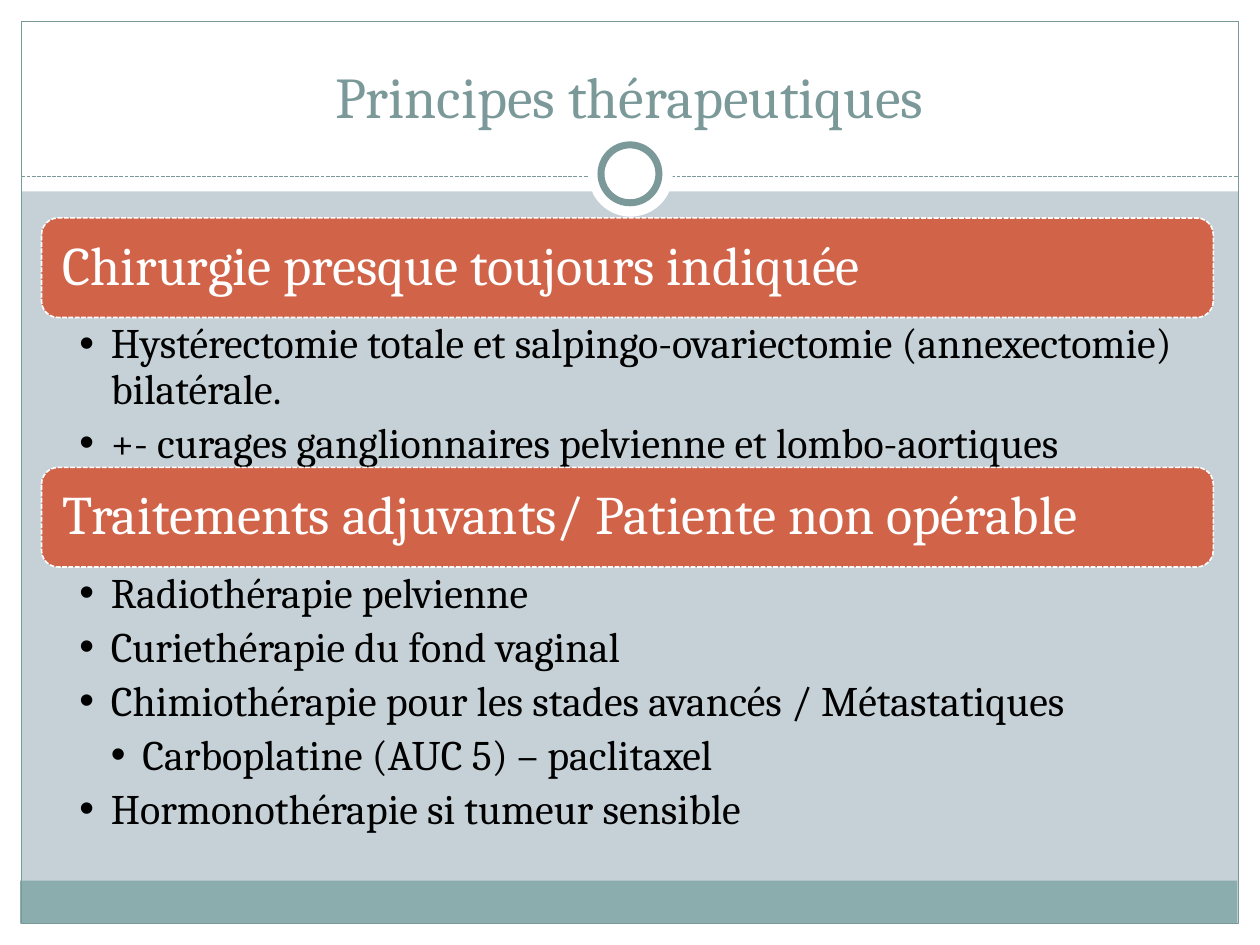
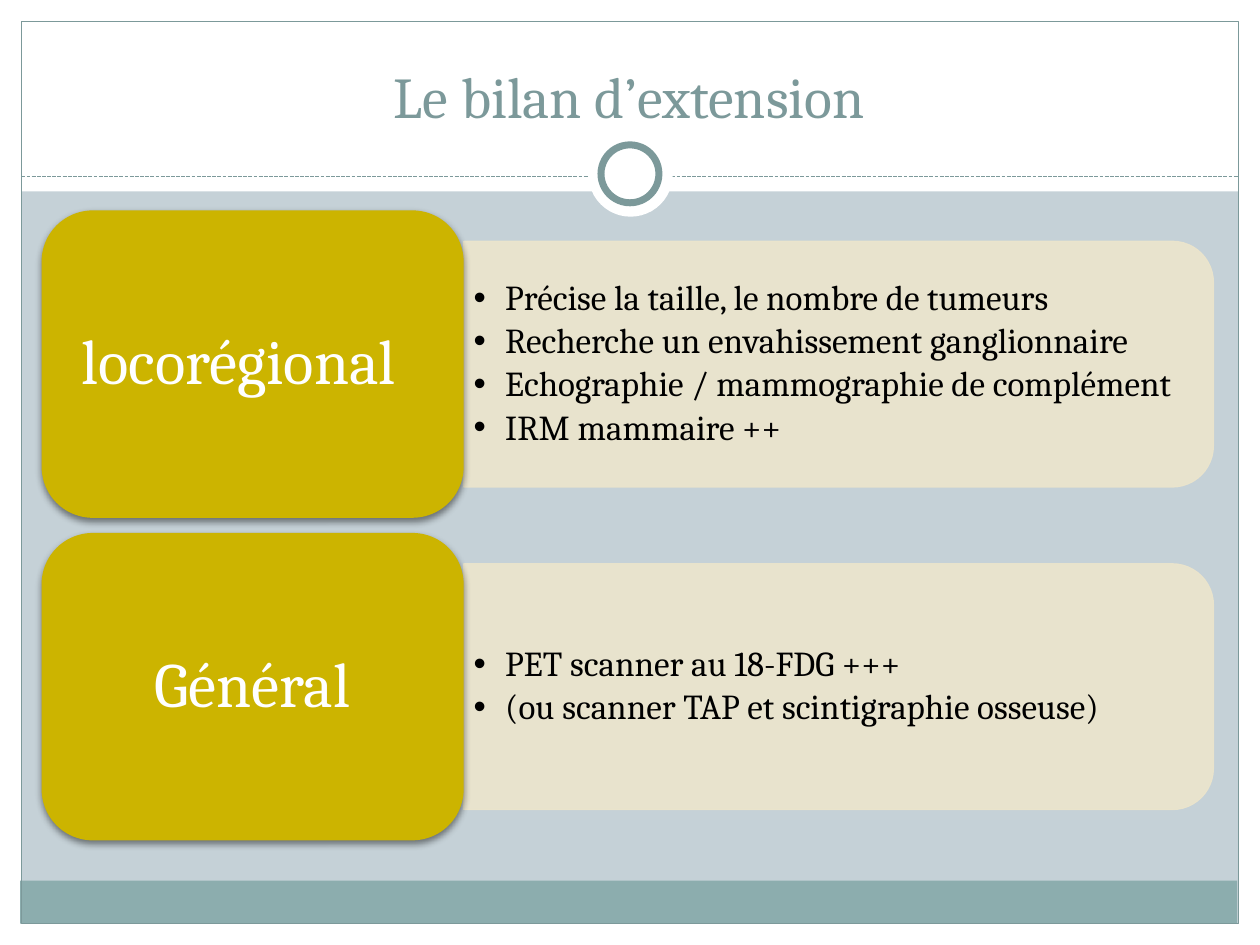
from dataclasses import dataclass
from typing import Optional

from lxml.etree import SubElement
from pptx import Presentation
from pptx.dml.color import RGBColor
from pptx.enum.dml import MSO_LINE
from pptx.enum.shapes import MSO_CONNECTOR, MSO_SHAPE
from pptx.enum.text import MSO_ANCHOR, MSO_AUTO_SIZE, PP_ALIGN
from pptx.oxml.ns import qn
from pptx.util import Inches, Pt

FONT = "Cambria"
COLORS = {
    "background": "C5D1D7",
    "white": "FFFFFF",
    "black": "000000",
    "footer": "8CADAE",
    "accent": "7C999A",
    "band": "D16349",
    "tile": "CCB400",
    "panel": "ECE5CC",
}
SLIDE_WIDTH, SLIDE_HEIGHT = 10, 7.5
MARGIN = 0.17
CONTENT_LEFT, CONTENT_WIDTH = 0.33, 9.3
BULLET_INDENT = 0.25


@dataclass
class Box:
    left: float
    top: float
    width: float
    height: float

    def lengths(self) -> tuple:
        return tuple(Inches(v) for v in (self.left, self.top, self.width, self.height))


@dataclass
class Decor:
    box: Box
    fill: Optional[str] = None
    line: Optional[str] = None
    line_width: float = 0.75
    kind: MSO_SHAPE = MSO_SHAPE.RECTANGLE


@dataclass
class TextStyle:
    size: float
    color: str
    insets: tuple
    space_after: float = 0
    align: PP_ALIGN = PP_ALIGN.LEFT
    anchor: MSO_ANCHOR = MSO_ANCHOR.MIDDLE
    line_spacing: float = 0.9


@dataclass
class Item:
    text: str
    level: int = 0


@dataclass
class Topic:
    heading: str
    items: list
    top: float
    list_height: float = 1.76
    extra_right_inset: float = 0


TITLE_STYLE = TextStyle(33, "accent", (0.1, 0.05, 0.1, 0.05), align=PP_ALIGN.CENTER,
                        anchor=MSO_ANCHOR.BOTTOM, line_spacing=1)
BAND_STYLE = TextStyle(31, "white", (0.13, 0.13, 0.13, 0.13))
BAND_LIST_STYLE = TextStyle(24, "black", (0.3, 0.04, 0.24, 0.04), 5, anchor=MSO_ANCHOR.TOP)
TILE_LIST_STYLE = TextStyle(20, "black", (0.08, 0.04, 0.08, 0.04), 3)

FRAME_DECOR = [
    Decor(Box(0, SLIDE_HEIGHT - MARGIN, SLIDE_WIDTH, MARGIN), "white"),
    Decor(Box(0, 0, SLIDE_WIDTH, 1.52), "white"),
    Decor(Box(0, 0, MARGIN, SLIDE_HEIGHT), "white"),
    Decor(Box(SLIDE_WIDTH - MARGIN, 0, MARGIN, SLIDE_HEIGHT), "white"),
    Decor(Box(0.16, 6.99, 9.66, 0.34), "footer"),
    Decor(Box(MARGIN, MARGIN, 9.66, 7.16), line="accent"),
]
RING_DECOR = [
    Decor(Box(4.67, 1.05, 0.67, 0.67), "white", kind=MSO_SHAPE.OVAL),
    Decor(Box(4.77, 1.15, 0.46, 0.46), "white", "accent", 4, MSO_SHAPE.OVAL),
]

PRINCIPLES = [
    Topic("Chirurgie presque toujours indiquée", [
        Item("Hystérectomie totale et salpingo-ovariectomie (annexectomie) bilatérale."),
        Item("+- curages ganglionnaires pelvienne et lombo-aortiques"),
    ], 1.73, 1.19),
    Topic("Traitements adjuvants/ Patiente non opérable", [
        Item("Radiothérapie pelvienne"),
        Item("Curiethérapie du fond vaginal"),
        Item("Chimiothérapie pour les stades avancés / Métastatiques"),
        Item("Carboplatine (AUC 5) – paclitaxel", 1),
        Item("Hormonothérapie si tumeur sensible"),
    ], 3.71, 2.11),
]
STAGING = [
    Topic("locorégional", [
        Item("Précise la taille, le nombre de tumeurs"),
        Item("Recherche un envahissement ganglionnaire"),
        Item("Echographie / mammographie de complément"),
        Item("IRM mammaire ++"),
    ], 1.67, extra_right_inset=0.22),
    Topic("Général", [
        Item("PET scanner au 18-FDG +++"),
        Item("(ou scanner TAP et scintigraphie osseuse)"),
    ], 4.23),
]


def rgb(name: str) -> RGBColor:
    return RGBColor.from_string(COLORS[name])


def draw_shape(slide, decor: Decor):
    shape = slide.shapes.add_shape(decor.kind, *decor.box.lengths())
    shape.shadow.inherit = False
    if decor.fill:
        shape.fill.solid()
        shape.fill.fore_color.rgb = rgb(decor.fill)
    else:
        shape.fill.background()
    if decor.line:
        shape.line.color.rgb = rgb(decor.line)
        shape.line.width = Pt(decor.line_width)
    else:
        shape.line.fill.background()
    return shape


def write_text(shape, items: list, style: TextStyle, bulleted: bool = False) -> None:
    frame = shape.text_frame
    frame.word_wrap = True
    frame.auto_size = MSO_AUTO_SIZE.NONE
    frame.vertical_anchor = style.anchor
    (frame.margin_left, frame.margin_top,
     frame.margin_right, frame.margin_bottom) = (Inches(v) for v in style.insets)
    for index, item in enumerate(items):
        paragraph = frame.add_paragraph() if index else frame.paragraphs[0]
        if bulleted:
            properties = paragraph._p.get_or_add_pPr()
            properties.set("marL", str(Inches(BULLET_INDENT * (item.level + 1))))
            properties.set("indent", str(-Inches(BULLET_INDENT)))
            SubElement(properties, qn("a:buChar"), char="•")
        paragraph.level = item.level
        paragraph.alignment = style.align
        paragraph.line_spacing = style.line_spacing
        paragraph.space_before = Pt(0)
        paragraph.space_after = Pt(style.space_after)
        run = paragraph.add_run()
        run.text = item.text
        run.font.name = FONT
        run.font.size = Pt(style.size)
        run.font.color.rgb = rgb(style.color)


def place_list(slide, placeholder, box: Box, items: list, style: TextStyle) -> None:
    """Move a body placeholder to the front and fill it with bullets."""
    placeholder.left, placeholder.top, placeholder.width, placeholder.height = box.lengths()
    write_text(placeholder, items, style, bulleted=True)
    slide.shapes.element.append(placeholder.element)


def add_alpha(element, percent: int) -> None:
    for color in element.spPr.iter(qn("a:srgbClr")):
        SubElement(color, qn("a:alpha"), val=str(percent * 1000))


def add_drop_shadow(shape) -> None:
    effects = shape.element.spPr.find(qn("a:effectLst"))
    shadow = SubElement(effects, qn("a:outerShdw"), blurRad=str(Pt(4)), dist=str(Pt(2)),
                        dir="5400000", rotWithShape="0")
    color = SubElement(shadow, qn("a:srgbClr"), val=COLORS["black"])
    SubElement(color, qn("a:alpha"), val="45000")


def build_layout(layout, slide) -> None:
    """Give the layout its background, frame, divider and ring."""
    layout.background.fill.solid()
    layout.background.fill.fore_color.rgb = rgb("background")
    title = layout.placeholders[0]
    title.left, title.top, title.width, title.height = Box(0.33, 0.25, 9.33, 0.83).lengths()

    parts = [draw_shape(slide, decor) for decor in FRAME_DECOR]
    divider = slide.shapes.add_connector(
        MSO_CONNECTOR.STRAIGHT, Inches(MARGIN), Inches(1.4),
        Inches(SLIDE_WIDTH - MARGIN), Inches(1.4))
    divider.line.color.rgb = rgb("accent")
    divider.line.width = Pt(0.75)
    divider.line.dash_style = MSO_LINE.SQUARE_DOT
    SubElement(divider.element.spPr, qn("a:effectLst"))
    parts += [divider] + [draw_shape(slide, decor) for decor in RING_DECOR]

    # Shapes are drawn on a slide, then handed to the layout behind its placeholders
    tree = layout.shapes.element
    for position, part in enumerate(parts, start=2):
        tree.insert(position, part.element)
    for number, properties in enumerate(tree.xpath(".//p:cNvPr"), start=1):
        properties.set("id", str(number))


def fill_principles(slide, topics: list) -> None:
    """Full-width bands, each followed by its list."""
    band_height = 0.79
    for topic, body in zip(topics, list(slide.placeholders)[1:]):
        band = draw_shape(slide, Decor(
            Box(CONTENT_LEFT, topic.top, CONTENT_WIDTH, band_height),
            "band", "white", 0.9, MSO_SHAPE.ROUNDED_RECTANGLE))
        band.line.dash_style = MSO_LINE.SQUARE_DOT
        write_text(band, [Item(topic.heading)], BAND_STYLE)
        list_box = Box(CONTENT_LEFT, topic.top + band_height, CONTENT_WIDTH, topic.list_height)
        place_list(slide, body, list_box, topic.items, BAND_LIST_STYLE)


def fill_staging(slide, topics: list) -> None:
    """Tiles on the left, each with a list panel on its right."""
    tile_width, tile_height = 3.35, 2.44
    panel_width, panel_height = CONTENT_WIDTH - tile_width, 1.95
    panel_left = CONTENT_LEFT + tile_width
    for topic, body in zip(topics, list(slide.placeholders)[1:]):
        middle = topic.top + tile_height / 2
        # The panel is a quarter-turned shape, so its sides are swapped
        panel = draw_shape(slide, Decor(
            Box(panel_left + (panel_width - panel_height) / 2, middle - panel_width / 2,
                panel_height, panel_width),
            "panel", "panel", kind=MSO_SHAPE.ROUND_2_SAME_RECTANGLE))
        panel.rotation = 90
        add_alpha(panel.element, 90)
        list_box = Box(panel_left, middle - topic.list_height / 2, 5.86, topic.list_height)
        place_list(slide, body, list_box, topic.items, TILE_LIST_STYLE)

        tile = draw_shape(slide, Decor(
            Box(CONTENT_LEFT, topic.top, tile_width, tile_height),
            "tile", kind=MSO_SHAPE.ROUNDED_RECTANGLE))
        add_drop_shadow(tile)
        # The rounded corners already keep the text away from the edges
        insets = (0.05, 0.07, 0.05 + topic.extra_right_inset, 0.07)
        write_text(tile, [Item(topic.heading)],
                   TextStyle(36, "white", insets, align=PP_ALIGN.CENTER))


def main() -> None:
    deck = Presentation()
    deck.slide_width, deck.slide_height = Inches(SLIDE_WIDTH), Inches(SLIDE_HEIGHT)
    layout = deck.slide_layouts.get_by_name("Two Content")
    pages = [
        ("Principes thérapeutiques", PRINCIPLES, fill_principles),
        ("Le bilan d’extension", STAGING, fill_staging),
    ]
    for number, (title, topics, fill) in enumerate(pages):
        slide = deck.slides.add_slide(layout)
        if number == 0:
            build_layout(layout, slide)
        write_text(slide.shapes.title, [Item(title)], TITLE_STYLE)
        fill(slide, topics)
    deck.save("out.pptx")


if __name__ == "__main__":
    main()
